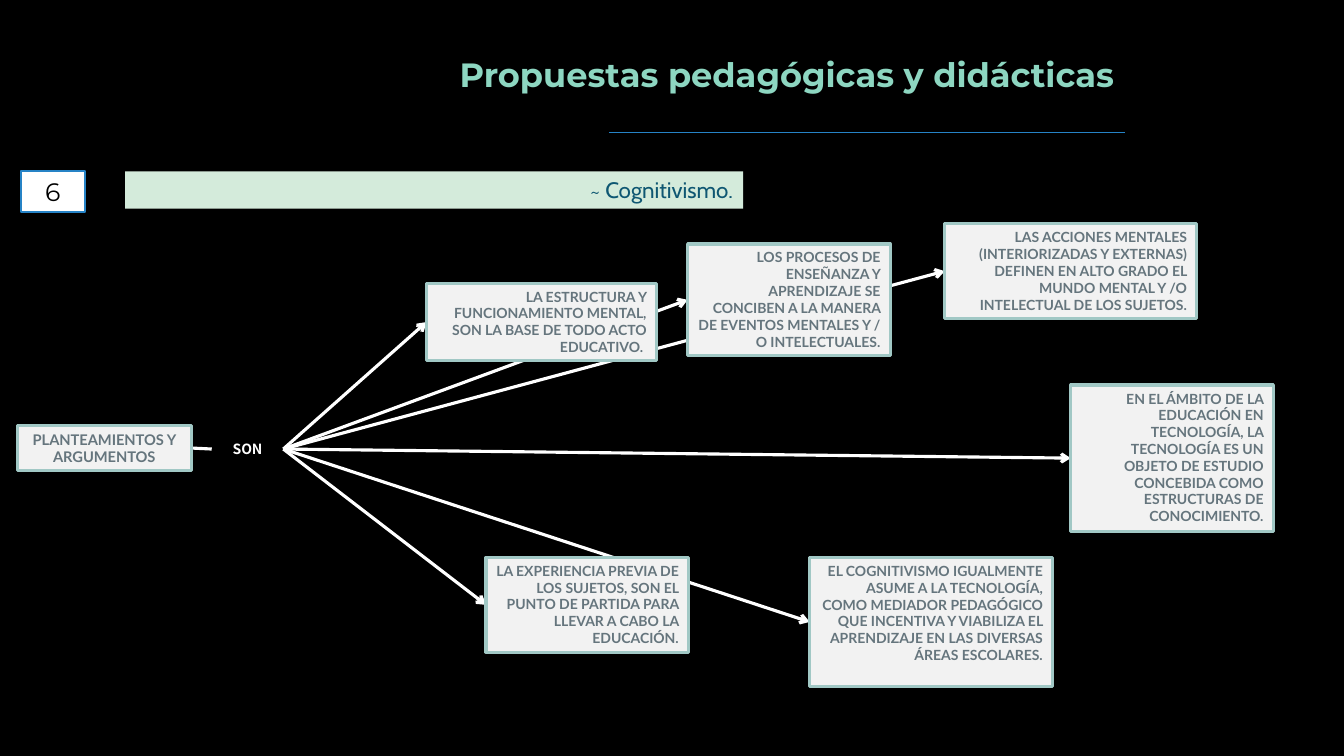
from pptx import Presentation
from pptx.dml.color import RGBColor as RGB
from pptx.enum.shapes import MSO_CONNECTOR as Conn, MSO_SHAPE as Kind
from pptx.enum.text import MSO_ANCHOR as Anchor, MSO_AUTO_SIZE as Auto, PP_ALIGN as Align
from pptx.oxml.ns import qn
from pptx.util import Inches, Pt
from lxml.etree import SubElement as Sub

BLACK = RGB(0x00, 0x00, 0x00)
WHITE = RGB(0xFF, 0xFF, 0xFF)
MINT = RGB(0x8D, 0xD6, 0xC1)
PALE = RGB(0xD4, 0xEB, 0xDB)
NAVY = RGB(0x0E, 0x57, 0x72)
BLUE = RGB(0x26, 0x83, 0xC6)
LIGHT = RGB(0xF2, 0xF2, 0xF2)
TEAL = RGB(0xA1, 0xC8, 0xC5)
SLATE = RGB(0x65, 0x75, 0x7D)

LEFT, RIGHT = 1, 3
NOTE = {"name": "Lato", "size": Pt(10), "bold": True}
HEAD = {"name": "Montserrat", "size": Pt(24), "bold": True}

CLAIMS = [
    ((4.23, 2.81, 2.28, 0.77),
     "LA ESTRUCTURA Y FUNCIONAMIENTO MENTAL, SON LA BASE DE TODO ACTO EDUCATIVO. "),
    ((6.82, 2.42, 2.01, 1.11),
     "LOS PROCESOS DE ENSEÑANZA Y APRENDIZAJE SE CONCIBEN A LA MANERA DE "
     "EVENTOS MENTALES Y / O INTELECTUALES."),
    ((9.37, 2.22, 2.5, 0.94),
     "LAS ACCIONES MENTALES (INTERIORIZADAS Y EXTERNAS) DEFINEN EN ALTO GRADO EL "
     "MUNDO MENTAL Y /O INTELECTUAL DE LOS SUJETOS."),
    ((10.62, 3.82, 2.01, 1.45),
     "EN EL ÁMBITO DE LA EDUCACIÓN EN TECNOLOGÍA, LA TECNOLOGÍA ES UN OBJETO DE "
     "ESTUDIO CONCEBIDA COMO ESTRUCTURAS DE CONOCIMIENTO."),
    ((8.03, 5.53, 2.41, 1.28),
     "EL COGNITIVISMO IGUALMENTE ASUME A LA TECNOLOGÍA, COMO MEDIADOR PEDAGÓGICO "
     "QUE INCENTIVA Y VIABILIZA EL APRENDIZAJE EN LAS DIVERSAS ÁREAS ESCOLARES."),
    ((4.82, 5.53, 2.01, 0.94),
     "LA EXPERIENCIA PREVIA DE LOS SUJETOS, SON EL PUNTO DE PARTIDA PARA LLEVAR A "
     "CABO LA EDUCACIÓN."),
]


class Board:
    """Holds the text style and the current slide, and draws each kind of element."""

    def __init__(self, deck):
        self.slide = deck.slides.add_slide(deck.slide_layouts[5])
        self.shapes = self.slide.shapes
        self.frame = {"word_wrap": True, "auto_size": Auto.NONE,
                      "margin_left": Inches(0.1), "margin_right": Inches(0.1),
                      "margin_top": Inches(0.05), "margin_bottom": Inches(0.05)}
        back = self.slide.background.fill
        back.solid()
        back.fore_color.rgb = BLACK

    def letter(self, shape, text, style, color, align, anchor):
        frame = shape.text_frame
        frame.text = text
        para = frame.paragraphs[0]
        font = para.runs[0].font
        jobs = ((frame, {**self.frame, "vertical_anchor": anchor}),
                (para, {"alignment": align}), (font, style))
        for item, values in jobs:
            for key, value in values.items():
                setattr(item, key, value)
        font.color.rgb = color

    def title(self, area, text):
        shape = self.shapes.title
        sides = zip(("left", "top", "width", "height"), area)
        for key, value in sides:
            setattr(shape, key, Inches(value))
        self.letter(shape, text, HEAD, MINT, Align.RIGHT, Anchor.MIDDLE)

    def label(self, area, text, style, color):
        shape = self.shapes.add_textbox(*map(Inches, area))
        self.letter(shape, text, style, color, Align.CENTER, Anchor.MIDDLE)
        return shape

    def box(self, area, text, style, color, fill, edge=None, width=2.25,
            align=Align.RIGHT, anchor=Anchor.TOP):
        shape = self.shapes.add_shape(Kind.RECTANGLE, *map(Inches, area))
        shape.shadow.inherit = False
        shape.fill.solid()
        shape.fill.fore_color.rgb = fill
        if edge is None:
            shape.line.fill.background()
        else:
            shape.line.color.rgb = edge
            shape.line.width = Pt(width)
        self.letter(shape, text, style, color, align, anchor)
        return shape

    def line(self, ends, color=WHITE, width=2.25, arrow=False):
        link = self.shapes.add_connector(Conn.STRAIGHT, *map(Inches, ends))
        link.line.color.rgb = color
        link.line.width = Pt(width)
        props = link.element.spPr
        if arrow:
            Sub(props.find(qn("a:ln")), qn("a:tailEnd"), type="arrow")
        Sub(props, qn("a:effectLst"))
        return link


def main():
    deck = Presentation()
    deck.slide_width, deck.slide_height = Inches(13.33), Inches(7.5)
    board = Board(deck)
    board.title((2.12, 0.48, 9.03, 0.5), "Propuestas pedagógicas y didácticas")
    board.line((11.16, 1.31, 6.04, 1.31), BLUE, 0.75)
    board.box((1.24, 1.7, 6.13, 0.37), "~ Cognitivismo.",
              {"name": "Cabin", "size": Pt(16)}, NAVY, PALE, anchor=Anchor.MIDDLE)
    board.box((0.21, 1.7, 0.63, 0.4), "6", {"name": "Montserrat", "size": Pt(18)},
              BLACK, WHITE, BLUE, 1.5, Align.CENTER, Anchor.MIDDLE)
    hub = board.label((2.1, 4.32, 0.71, 0.27), "SON",
                      {**NOTE, "name": "Noto Sans CJK SC"}, WHITE)

    links = []
    for (left, top, _, height), _ in CLAIMS:
        links.append(board.line((2.81, 4.45, left, top + height / 2), arrow=True))
    for link, (area, text) in zip(links, CLAIMS):
        claim = board.box(area, text, NOTE, SLATE, LIGHT, TEAL)
        link.begin_connect(hub, RIGHT)
        link.end_connect(claim, LEFT)

    stem = board.line((1.9, 4.45, 2.1, 4.45))
    root = board.box((0.17, 4.22, 1.73, 0.45), "PLANTEAMIENTOS Y ARGUMENTOS",
                     {**NOTE, "size": Pt(10.5)}, SLATE, LIGHT, TEAL,
                     align=Align.CENTER, anchor=Anchor.MIDDLE)
    stem.begin_connect(root, RIGHT)
    stem.end_connect(hub, LEFT)
    deck.save("out.pptx")


if __name__ == "__main__":
    main()
